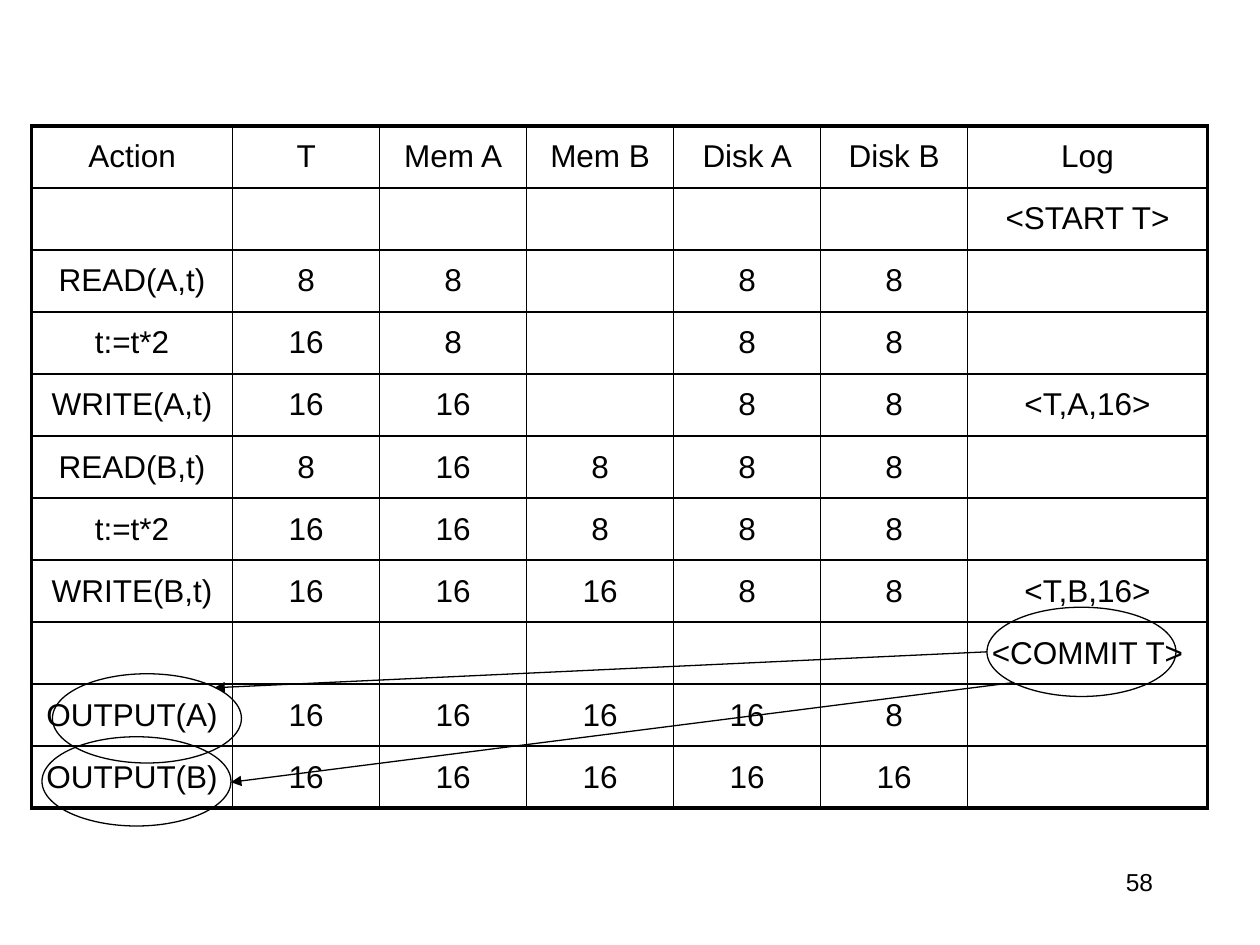
from dataclasses import dataclass

from lxml.etree import SubElement
from pptx import Presentation
from pptx.dml.color import RGBColor
from pptx.enum.shapes import MSO_CONNECTOR, MSO_SHAPE
from pptx.enum.text import MSO_ANCHOR, PP_ALIGN
from pptx.oxml.ns import qn
from pptx.util import Pt


@dataclass(frozen=True)
class Theme:
    font: str = "Arial"
    ink: str = "000000"
    cell_size: float = 18
    number_size: float = 14
    grid_line: float = 1
    frame_line: float = 2.25
    mark_line: float = 0.75


HEADERS = ["Action", "T", "Mem A", "Mem B", "Disk A", "Disk B", "Log"]
STEPS = [
    ["", "", "", "", "", "", "<START T>"],
    ["READ(A,t)", "8", "8", "", "8", "8", ""],
    ["t:=t*2", "16", "8", "", "8", "8", ""],
    ["WRITE(A,t)", "16", "16", "", "8", "8", "<T,A,16>"],
    ["READ(B,t)", "8", "16", "8", "8", "8", ""],
    ["t:=t*2", "16", "16", "8", "8", "8", ""],
    ["WRITE(B,t)", "16", "16", "16", "8", "8", "<T,B,16>"],
    ["", "", "", "", "", "", "<COMMIT T>"],
    ["OUTPUT(A)", "16", "16", "16", "16", "8", ""],
    ["OUTPUT(B)", "16", "16", "16", "16", "16", ""],
]
COLUMN_WIDTHS = [115] + [84] * 5 + [137]
ROW_HEIGHT = 35.45
MARK_SIZE = (108, 51)


class SlideBuilder:
    def __init__(self, slide, theme):
        self.shapes = slide.shapes
        self.theme = theme
        self.ink = RGBColor.from_string(theme.ink)

    def add_span(self, para, text, size, align):
        para.alignment = align
        span = para.add_run()
        span.text = text
        span.font.name = self.theme.font
        span.font.size = Pt(size)
        span.font.color.rgb = self.ink

    def text(self, left, top, width, height, text, size, align):
        box = self.shapes.add_textbox(Pt(left), Pt(top), Pt(width), Pt(height))
        box.text_frame.word_wrap = True
        self.add_span(box.text_frame.paragraphs[0], text, size, align)

    def border(self, cell, outer_sides):
        """Draw all four cell borders, heavier on the outer sides."""
        properties = cell._tc.get_or_add_tcPr()
        for side in "LRTB":
            width = self.theme.frame_line if side in outer_sides else self.theme.grid_line
            line = SubElement(properties, qn(f"a:ln{side}"), w=str(Pt(width)))
            fill = SubElement(line, qn("a:solidFill"))
            SubElement(fill, qn("a:srgbClr"), val=self.theme.ink)

    def table(self, left, top, widths, row_height, rows):
        last_row, last_column = len(rows) - 1, len(widths) - 1
        frame = self.shapes.add_table(
            len(rows), len(widths), Pt(left), Pt(top),
            Pt(sum(widths)), Pt(row_height * len(rows)))
        table = frame.table
        table.first_row = table.horz_banding = False
        for column, width in zip(table.columns, widths):
            column.width = Pt(width)
        for r, values in enumerate(rows):
            table.rows[r].height = Pt(row_height)
            for c, value in enumerate(values):
                cell = table.cell(r, c)
                cell.vertical_anchor = MSO_ANCHOR.MIDDLE
                edges = {"L": c == 0, "R": c == last_column,
                         "T": r == 0, "B": r == last_row}
                self.border(cell, [side for side, outer in edges.items() if outer])
                cell.fill.background()
                if value:
                    para = cell.text_frame.paragraphs[0]
                    para.space_before = Pt(0.2 * self.theme.cell_size)
                    self.add_span(para, value, self.theme.cell_size, PP_ALIGN.CENTER)

    def outline(self, line):
        line.color.rgb = self.ink
        line.width = Pt(self.theme.mark_line)

    def ellipse(self, left, top, width, height):
        shape = self.shapes.add_shape(
            MSO_SHAPE.OVAL, Pt(left), Pt(top), Pt(width), Pt(height))
        shape.shadow.inherit = False
        shape.fill.background()
        self.outline(shape.line)

    def arrow(self, start, end):
        connector = self.shapes.add_connector(
            MSO_CONNECTOR.STRAIGHT, *(Pt(value) for value in (*start, *end)))
        self.outline(connector.line)
        SubElement(connector.line._get_or_add_ln(), qn("a:tailEnd"), type="triangle")
        SubElement(connector._element.spPr, qn("a:effectLst"))


def main():
    deck = Presentation()
    deck.slide_width, deck.slide_height = Pt(720), Pt(540)
    theme = Theme()
    page = SlideBuilder(deck.slides.add_slide(deck.slide_layouts[6]), theme)

    page.text(516, 492, 150, 36, "58", theme.number_size, PP_ALIGN.RIGHT)
    page.table(18, 72, COLUMN_WIDTHS, ROW_HEIGHT, [HEADERS] + STEPS)

    page.ellipse(30, 385, *MARK_SIZE)
    page.ellipse(564, 347, *MARK_SIZE)
    page.arrow((564, 372.5), (122.5, 393))
    page.ellipse(24, 421, *MARK_SIZE)
    page.arrow((579.5, 390), (132, 447))

    deck.save("out.pptx")


if __name__ == "__main__":
    main()
